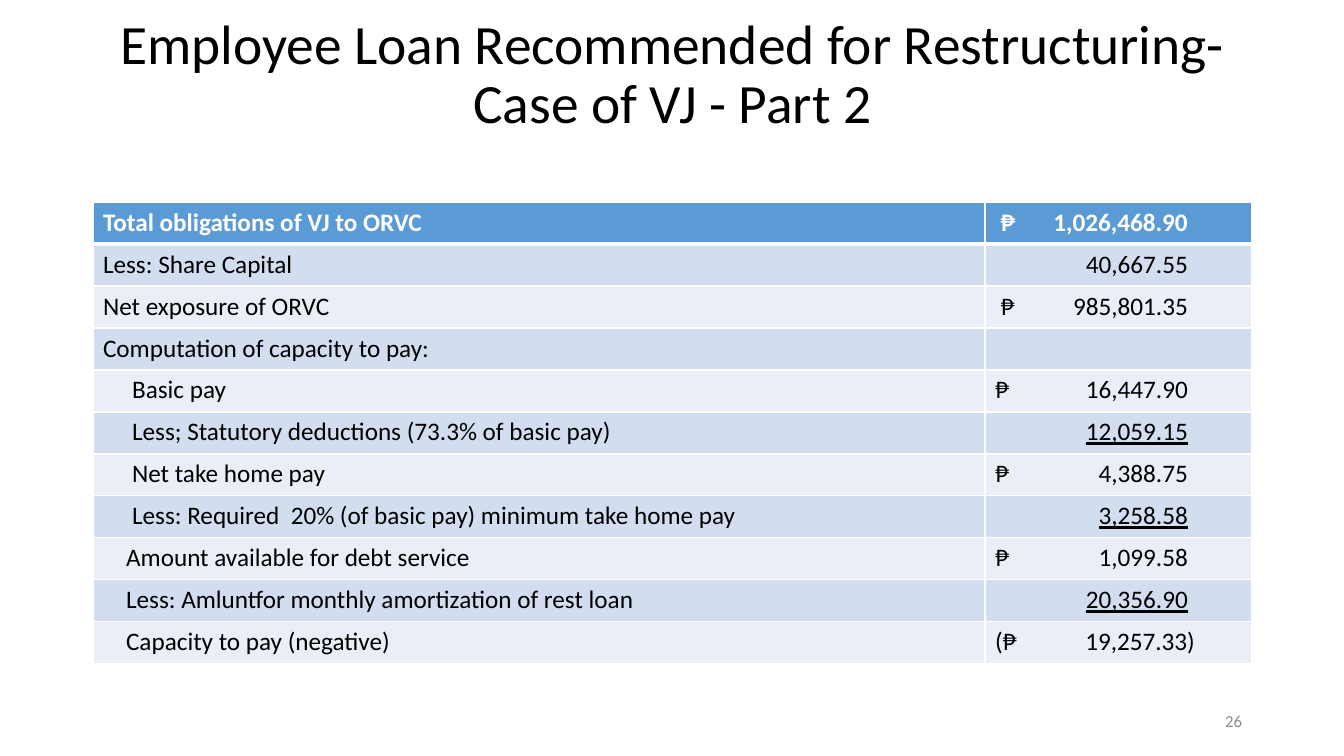
"""Build the loan restructuring slide."""
from dataclasses import dataclass

from lxml import etree
from pptx import Presentation
from pptx.dml.color import RGBColor
from pptx.enum.text import MSO_ANCHOR, MSO_AUTO_SIZE, PP_ALIGN
from pptx.oxml.ns import qn
from pptx.util import Pt

LEFT, CENTER, RIGHT = PP_ALIGN.LEFT, PP_ALIGN.CENTER, PP_ALIGN.RIGHT
MIDDLE = MSO_ANCHOR.MIDDLE
NO_FIT = MSO_AUTO_SIZE.NONE
SCALE = 914400 / 100.8


@dataclass(frozen=True)
class Theme:
    """Colours and type sizes of the slide."""
    font: str = "Calibri"
    ink: str = "000000"
    white: str = "FFFFFF"
    grey: str = "8C8C8C"
    head: str = "5B9BD5"
    bands: tuple = ("EAEFF7", "D2DEEF")
    title: float = 39.6
    body: float = 18
    small: float = 12


THEME = Theme()
TITLE = "Employee Loan Recommended for Restructuring-Case of VJ - Part 2"
COLS = (892, 267)
ROW = 42
TAB, WIDE_TAB = 193, 200
STEP, DEEP = 23, 29

ROWS = (
    ("Total obligations of VJ to ORVC", 0, " ₱\t1,026,468.90", False),
    ("Less: Share Capital", 0, "\t40,667.55", False),
    ("Net exposure of ORVC", 0, " ₱\t985,801.35", False),
    ("Computation of capacity to pay:", 0, "", False),
    ("Basic pay", DEEP, "₱\t16,447.90", False),
    ("Less; Statutory deductions (73.3% of basic pay)", DEEP,
     "\t12,059.15", True),
    ("Net take home pay", DEEP, "₱\t4,388.75", False),
    ("Less: Required  20% (of basic pay) minimum take home pay", DEEP,
     "\t3,258.58", True),
    ("Amount available for debt service", STEP, "₱\t1,099.58", False),
    ("Less: Amluntfor monthly amortization of rest loan", STEP,
     "\t20,356.90", True),
    ("Capacity to pay (negative)", STEP, "(₱\t19,257.33)", False),
)


def px(count):
    """Turn px into EMU."""
    return round(count * SCALE)


def put(frame, text, size=THEME.body, color=THEME.ink, bold=False,
        line=False, align=LEFT, indent=0, tab=0):
    """Write formatted text in a frame and return its paragraph."""
    para = frame.paragraphs[0]
    para.alignment = align
    props = para._p.get_or_add_pPr()
    if indent:
        props.set("marL", str(px(indent)))
        props.set("indent", "0")
    if tab:
        stops = etree.SubElement(props, qn("a:tabLst"))
        etree.SubElement(stops, qn("a:tab"), pos=str(px(tab)), algn="r")
    run = para.add_run()
    run.text = text
    font = run.font
    font.name, font.size = THEME.font, Pt(size)
    font.bold, font.underline = bold, line
    font.color.rgb = RGBColor.from_string(color)
    return para


def edge(cell, top, bottom):
    """Draw the white borders of a cell, widths in points."""
    props = cell._tc.get_or_add_tcPr()
    widths = {"L": 1, "R": 1, "T": top, "B": bottom}
    for place, (side, width) in enumerate(widths.items()):
        rule = etree.Element(qn(f"a:ln{side}"), w=str(Pt(width)))
        fill = etree.SubElement(rule, qn("a:solidFill"))
        etree.SubElement(fill, qn("a:srgbClr"), val=THEME.white)
        props.insert(place, rule)


def add_title(slide):
    """Place and fill the title."""
    title = slide.shapes.title
    title.left, title.top = px(93), px(40)
    title.width, title.height = px(1159), px(146)
    frame = title.text_frame
    frame.word_wrap, frame.auto_size = True, NO_FIT
    frame.vertical_anchor = MIDDLE
    para = put(frame, TITLE, size=THEME.title, align=CENTER)
    para.line_spacing = 0.9
    para.add_line_break()


def add_loan(slide):
    """Add the table of obligations and capacity to pay."""
    table = slide.shapes.add_table(
        len(ROWS), len(COLS), px(93), px(202),
        px(sum(COLS)), px(ROW * len(ROWS))).table
    for col, width in zip(table.columns, COLS):
        col.width = px(width)
    for num, (label, indent, amount, line) in enumerate(ROWS):
        table.rows[num].height = px(ROW)
        head = num == 0
        shade = THEME.head if head else THEME.bands[num % 2]
        look = {"color": THEME.white if head else THEME.ink, "bold": head}
        name, sum_cell = table.cell(num, 0), table.cell(num, 1)
        for cell in (name, sum_cell):
            cell.fill.solid()
            cell.fill.fore_color.rgb = RGBColor.from_string(shade)
            edge(cell, 3 if num == 1 else 1, 3 if head else 1)
        put(name.text_frame, label, indent=indent, **look)
        if amount:
            stop = WIDE_TAB if amount.endswith(")") else TAB
            put(sum_cell.text_frame, amount, line=line, tab=stop, **look)


def add_page(slide):
    """Add the page number."""
    box = slide.shapes.add_textbox(px(950), px(701), px(302), px(40))
    frame = box.text_frame
    frame.word_wrap, frame.vertical_anchor = True, MIDDLE
    put(frame, "26", size=THEME.small, color=THEME.grey, align=RIGHT)


def main():
    """Build and save the slide."""
    deck = Presentation()
    deck.slide_width, deck.slide_height = px(1344), px(756)
    slide = deck.slides.add_slide(deck.slide_layouts[5])
    add_title(slide)
    add_loan(slide)
    add_page(slide)
    deck.save("out.pptx")


if __name__ == "__main__":
    main()
